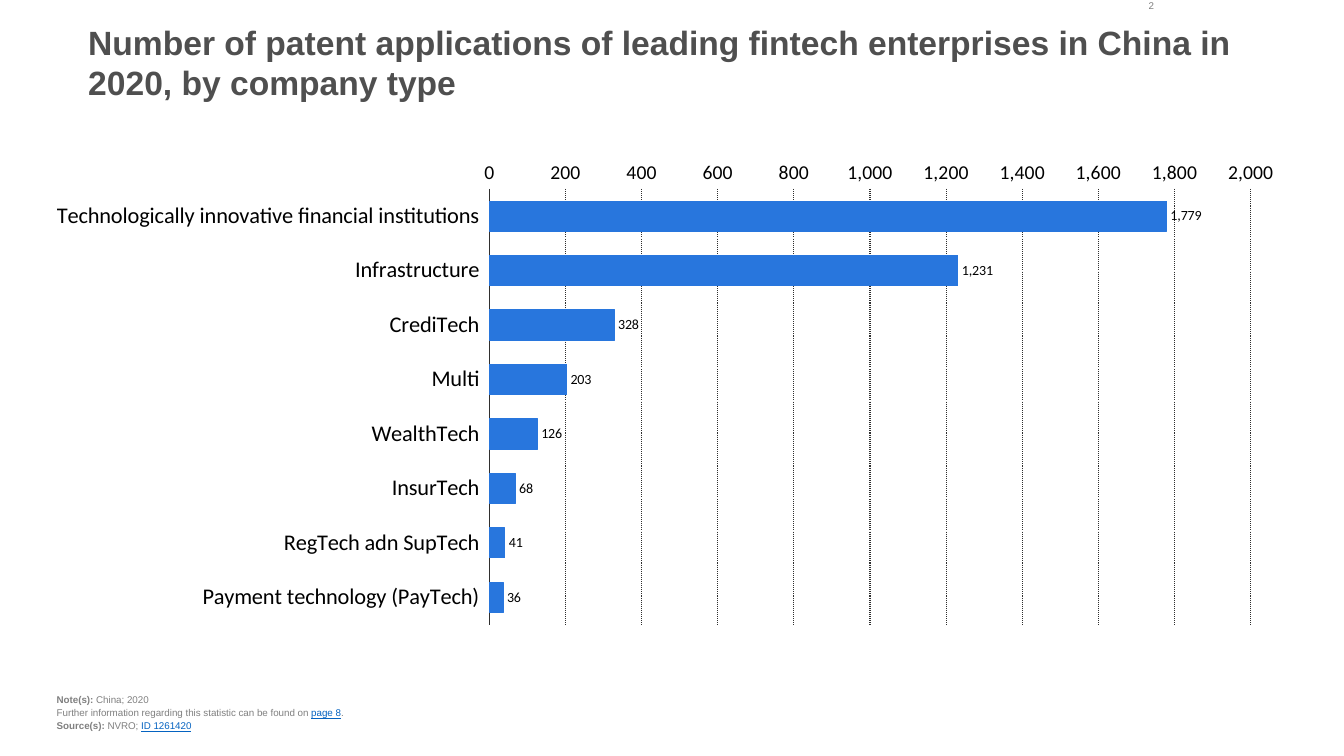
from dataclasses import dataclass

from pptx import Presentation
from pptx.chart.data import CategoryChartData
from pptx.dml.color import RGBColor
from pptx.enum.chart import XL_CHART_TYPE, XL_LABEL_POSITION, XL_TICK_LABEL_POSITION, XL_TICK_MARK
from pptx.enum.dml import MSO_LINE
from pptx.enum.text import MSO_ANCHOR, MSO_AUTO_SIZE, PP_ALIGN
from pptx.util import Emu, Pt


@dataclass(frozen=True)
class Theme:
    heading: str = "4F4F4F"
    muted: str = "808080"
    link: str = "0563C1"
    ink: str = "000000"
    rule: str = "2F2F2F"
    bar: str = "2876DD"
    text_face: str = "Arial"
    chart_face: str = "Calibri"
    title_size: int = 24
    small_size: int = 7
    category_size: int = 16
    scale_size: int = 14
    value_size: int = 10
    rule_width: float = 0.75


THEME = Theme()

APPLICATIONS = {
    "Technologically innovative financial institutions": 1779,
    "Infrastructure": 1231,
    "CrediTech": 328,
    "Multi": 203,
    "WealthTech": 126,
    "InsurTech": 68,
    "RegTech adn SupTech": 41,
    "Payment technology (PayTech)": 36,
}

LABEL = {"bold": True}
PLAIN = {}
LINK = {"color": THEME.link, "underline": True}
FOOTNOTES = [
    [("Note(s):", LABEL), (" China; 2020", PLAIN)],
    [
        ("Further information regarding this statistic can be found on ", PLAIN),
        ("page 8", LINK),
        (".", PLAIN),
    ],
    [("Source(s): ", LABEL), ("NVRO; ", PLAIN), ("ID 1261420", LINK)],
]


def px(length):
    return Emu(length * 9525)


def set_all(target, values):
    for attribute, value in values.items():
        setattr(target, attribute, value)


def style_font(font, face, size, color, **extras):
    set_all(font, {"name": face, "size": Pt(size), **extras})
    font.color.rgb = RGBColor.from_string(color)


def style_line(line, color, dash=None):
    line.color.rgb = RGBColor.from_string(color)
    line.width = Pt(THEME.rule_width)
    if dash:
        line.dash_style = dash


def prepare_frame(frame, anchor):
    set_all(frame, {
        "word_wrap": True,
        "auto_size": MSO_AUTO_SIZE.NONE,
        "vertical_anchor": anchor,
        "margin_left": 0,
        "margin_top": 0,
        "margin_right": 0,
        "margin_bottom": 0,
    })


def place_title(slide, box, wording):
    title = slide.shapes.title
    set_all(title, dict(zip(("left", "top", "width", "height"), map(px, box))))
    prepare_frame(title.text_frame, MSO_ANCHOR.TOP)
    paragraph = title.text_frame.paragraphs[0]
    paragraph.alignment = PP_ALIGN.LEFT
    run = paragraph.add_run()
    run.text = wording
    style_font(run.font, THEME.text_face, THEME.title_size, THEME.heading, bold=True)


def place_small_text(slide, box, lines, anchor=MSO_ANCHOR.TOP, alignment=PP_ALIGN.LEFT):
    frame = slide.shapes.add_textbox(*map(px, box)).text_frame
    prepare_frame(frame, anchor)
    for index, line in enumerate(lines):
        paragraph = frame.add_paragraph() if index else frame.paragraphs[0]
        set_all(paragraph, {"alignment": alignment, "space_after": Pt(1)})
        for wording, emphasis in line:
            run = paragraph.add_run()
            run.text = wording
            style_font(run.font, THEME.text_face, THEME.small_size,
                       **{"color": THEME.muted, **emphasis})


def place_applications_chart(slide, box):
    applications = CategoryChartData(number_format="#,##0")
    applications.categories = list(APPLICATIONS)
    applications.add_series("Series 1", list(APPLICATIONS.values()))
    chart = slide.shapes.add_chart(
        XL_CHART_TYPE.BAR_CLUSTERED, *map(px, box), applications).chart
    set_all(chart, {"has_title": False, "has_legend": False})
    style_font(chart.font, THEME.chart_face, 18, THEME.ink)

    bars = chart.plots[0]
    set_all(bars, {
        "gap_width": 80, "overlap": -30,
        "vary_by_categories": False, "has_data_labels": True,
    })
    bar_format = bars.series[0].format
    bar_format.fill.solid()
    bar_format.fill.fore_color.rgb = RGBColor.from_string(THEME.bar)
    style_line(bar_format.line, THEME.bar)

    set_all(bars.data_labels, {
        "show_value": True,
        "position": XL_LABEL_POSITION.OUTSIDE_END,
        "number_format": "#,##0",
        "number_format_is_linked": False,
    })
    style_font(bars.data_labels.font, THEME.chart_face, THEME.value_size, THEME.ink)

    no_ticks = {"major_tick_mark": XL_TICK_MARK.NONE, "minor_tick_mark": XL_TICK_MARK.NONE}
    company_types = chart.category_axis
    set_all(company_types, {
        **no_ticks,
        "reverse_order": True,
        "has_major_gridlines": False,
        "tick_label_position": XL_TICK_LABEL_POSITION.LOW,
    })
    style_font(company_types.tick_labels.font, THEME.chart_face, THEME.category_size, THEME.ink)
    style_line(company_types.format.line, THEME.rule)

    scale = chart.value_axis
    set_all(scale, {
        **no_ticks,
        "minimum_scale": 0,
        "maximum_scale": 2000,
        "major_unit": 200,
        "has_major_gridlines": True,
    })
    set_all(scale.tick_labels, {"number_format": "#,##0", "number_format_is_linked": False})
    style_font(scale.tick_labels.font, THEME.chart_face, THEME.scale_size, THEME.ink)
    scale.format.line.fill.background()
    style_line(scale.major_gridlines.format.line, THEME.rule, MSO_LINE.ROUND_DOT)


def build_statistic_slide(deck):
    slide = deck.slides.add_slide(deck.slide_layouts[5])
    place_title(
        slide, (84, 21, 1143, 117),
        "Number of patent applications of leading fintech enterprises in China in 2020, "
        "by company type")
    place_small_text(slide, (54, 641, 847, 56), FOOTNOTES, anchor=MSO_ANCHOR.BOTTOM)
    place_applications_chart(slide, (30, 144, 1207, 460))
    place_small_text(slide, (1053, 0, 46, 21), [[("2", PLAIN)]], alignment=PP_ALIGN.RIGHT)


def main():
    deck = Presentation()
    set_all(deck, {"slide_width": px(1280), "slide_height": px(720)})
    build_statistic_slide(deck)
    deck.save("out.pptx")


if __name__ == "__main__":
    main()
